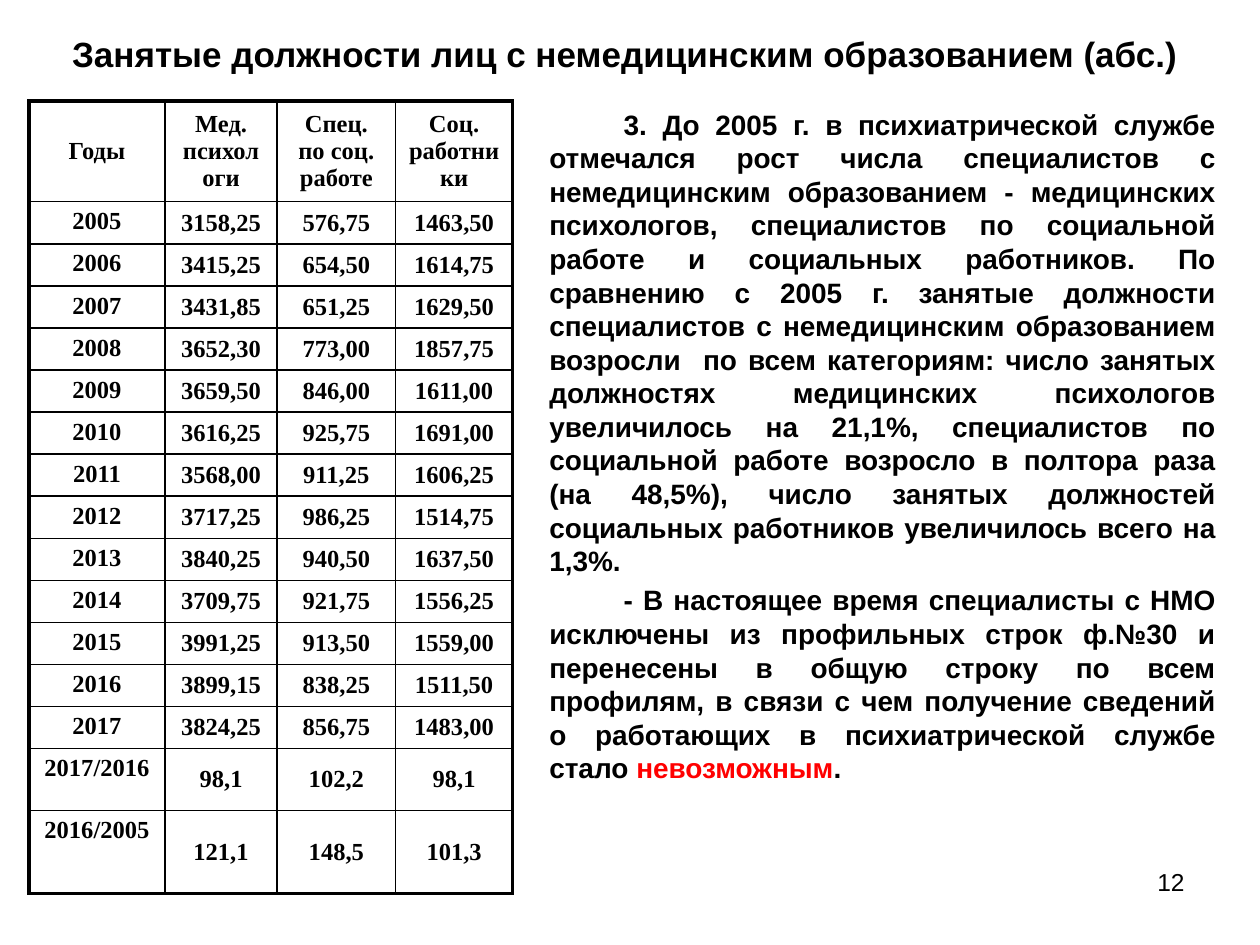
import pptx
import pptx.dml.color
import pptx.enum.text
import pptx.oxml
import pptx.oxml.ns
import pptx.util

WIDTH, HEIGHT = pptx.util.Inches(10), pptx.util.Inches(7.5)
ALIGN = pptx.enum.text.PP_ALIGN
ANCHOR = pptx.enum.text.MSO_ANCHOR
BLACK, WHITE, RED = "000000", "FFFFFF", "FF0000"
THIN, THICK = 1, 2.25

TITLE = "Занятые должности лиц с немедицинским образованием (абс.)"
BODY = [
    [("3. До 2005 г. в психиатрической службе отмечался рост числа специалистов с "
      "немедицинским образованием - медицинских психологов, специалистов по социальной "
      "работе и социальных работников. По сравнению с 2005 г. занятые должности "
      "специалистов с немедицинским образованием возросли  по всем категориям: число "
      "занятых должностях медицинских психологов увеличилось на 21,1%, специалистов по "
      "социальной работе возросло в полтора раза (на 48,5%), число занятых должностей "
      "социальных работников увеличилось всего на 1,3%.", BLACK)],
    [("- В настоящее время специалисты с НМО исключены из профильных строк ф.№30 и "
      "перенесены в общую строку по всем профилям, в связи с чем получение сведений о "
      "работающих в психиатрической службе стало ", BLACK),
     ("невозможным", RED), (".", BLACK)],
]
STAFF = [
    ("Годы", "Мед. психологи", "Спец. по соц. работе", "Соц. работники"),
    ("2005", "3158,25", "576,75", "1463,50"),
    ("2006", "3415,25", "654,50", "1614,75"),
    ("2007", "3431,85", "651,25", "1629,50"),
    ("2008", "3652,30", "773,00", "1857,75"),
    ("2009", "3659,50", "846,00", "1611,00"),
    ("2010", "3616,25", "925,75", "1691,00"),
    ("2011", "3568,00", "911,25", "1606,25"),
    ("2012", "3717,25", "986,25", "1514,75"),
    ("2013", "3840,25", "940,50", "1637,50"),
    ("2014", "3709,75", "921,75", "1556,25"),
    ("2015", "3991,25", "913,50", "1559,00"),
    ("2016", "3899,15", "838,25", "1511,50"),
    ("2017", "3824,25", "856,75", "1483,00"),
    ("2017/2016", "98,1", "102,2", "98,1"),
    ("2016/2005", "121,1", "148,5", "101,3"),
]
COLUMN_SHARES = [10.8, 8.9, 9.4, 9.3]
ROW_SHARES = [9.6] + [4.27] * 13 + [6.53, 8.8]


def color(value):
    """Turn a hex string into a colour."""
    return pptx.dml.color.RGBColor.from_string(value)


def across(share):
    """Turn a percentage of the slide width into a length."""
    return int(WIDTH * share / 100)


def down(share):
    """Turn a percentage of the slide height into a length."""
    return int(HEIGHT * share / 100)


def apply(target, values):
    """Set each attribute of the target from a dict."""
    for name, value in values.items():
        setattr(target, name, value)


def box(left, top, width, height):
    """Give a position and size from percentages of the slide."""
    return {"left": across(left), "top": down(top),
            "width": across(width), "height": down(height)}


def paint(target, value):
    """Fill a shape or cell with a solid colour."""
    target.fill.solid()
    target.fill.fore_color.rgb = color(value)


def write(paragraph, runs, size, font="Arial", bold=True, **layout):
    """Add coloured runs to a paragraph and lay it out."""
    apply(paragraph, layout)
    for text, ink in runs:
        run = paragraph.add_run()
        run.text = text
        apply(run.font, {"name": font, "size": pptx.util.Pt(size), "bold": bold})
        run.font.color.rgb = color(ink)


def indent_first_line(paragraph, indent):
    """Drop the bullet and indent the first line only."""
    properties = paragraph._p.get_or_add_pPr()
    properties.set("marL", "0")
    properties.set("indent", str(indent))
    properties.append(pptx.oxml.parse_xml(
        f"<a:buNone {pptx.oxml.ns.nsdecls('a')}/>"))


def add_title(slide):
    """Fill the title placeholder."""
    title = slide.shapes.title
    apply(title, box(4.2, 0, 90.8, 11.33))
    paint(title, WHITE)
    apply(title.text_frame, {"vertical_anchor": ANCHOR.MIDDLE, "word_wrap": True,
                             "auto_size": pptx.enum.text.MSO_AUTO_SIZE.NONE})
    write(title.text_frame.paragraphs[0], [(TITLE, BLACK)], 20, alignment=ALIGN.CENTER)


def add_body(slide):
    """Fill the body placeholder with justified paragraphs."""
    body = slide.placeholders[1]
    apply(body, box(42.6, 10.67, 54.9, 77.47))
    paint(body, WHITE)
    frame = body.text_frame
    apply(frame, {"auto_size": pptx.enum.text.MSO_AUTO_SIZE.NONE, "word_wrap": True})
    for index, runs in enumerate(BODY):
        paragraph = frame.add_paragraph() if index else frame.paragraphs[0]
        write(paragraph, runs, 16, alignment=ALIGN.JUSTIFY,
              space_before=pptx.util.Pt(3.2), line_spacing=pptx.util.Pt(19.2))
        indent_first_line(paragraph, across(5.9))


def add_page_number(slide, number):
    """Add the page number at the lower right."""
    frame = slide.shapes.add_textbox(**box(71.7, 91.07, 23.3, 6.93)).text_frame
    frame.word_wrap = True
    write(frame.paragraphs[0], [(number, BLACK)], 14, bold=False, alignment=ALIGN.RIGHT)


def set_borders(cell, widths):
    """Draw the left, right, top and bottom borders of a cell."""
    properties = cell._tc.get_or_add_tcPr()
    for index, (side, width) in enumerate(zip("LRTB", widths)):
        properties.insert(index, pptx.oxml.parse_xml(
            f'<a:ln{side} {pptx.oxml.ns.nsdecls("a")} w="{pptx.util.Pt(width)}">'
            f'<a:solidFill><a:srgbClr val="{BLACK}"/></a:solidFill></a:ln{side}>'))


def add_staff_table(slide):
    """Add the table of posts by year with a heavy outer frame."""
    last_row, last_column = len(STAFF) - 1, len(COLUMN_SHARES) - 1
    place = box(2.3, 10.67, sum(COLUMN_SHARES), sum(ROW_SHARES))
    table = slide.shapes.add_table(len(STAFF), len(COLUMN_SHARES), **place).table
    apply(table, {"first_row": False, "horz_banding": False})
    for column, share in zip(table.columns, COLUMN_SHARES):
        column.width = across(share)
    for row, share in zip(table.rows, ROW_SHARES):
        row.height = down(share)
    for row, values in enumerate(STAFF):
        for column, value in enumerate(values):
            cell = table.cell(row, column)
            is_year = column == 0 and row > 0
            cell.vertical_anchor = ANCHOR.TOP if is_year else ANCHOR.MIDDLE
            paint(cell, WHITE)
            write(cell.text_frame.paragraphs[0], [(value, BLACK)], 14,
                  font="Times New Roman", alignment=ALIGN.CENTER)
            outer = (column == 0, column == last_column, row == 0, row == last_row)
            set_borders(cell, [THICK if edge else THIN for edge in outer])


def main():
    """Build the slide and save it."""
    presentation = pptx.Presentation()
    apply(presentation, {"slide_width": WIDTH, "slide_height": HEIGHT})
    slide = presentation.slides.add_slide(presentation.slide_layouts[1])
    add_title(slide)
    add_body(slide)
    add_page_number(slide, "12")
    add_staff_table(slide)
    presentation.save("out.pptx")


if __name__ == "__main__":
    main()
